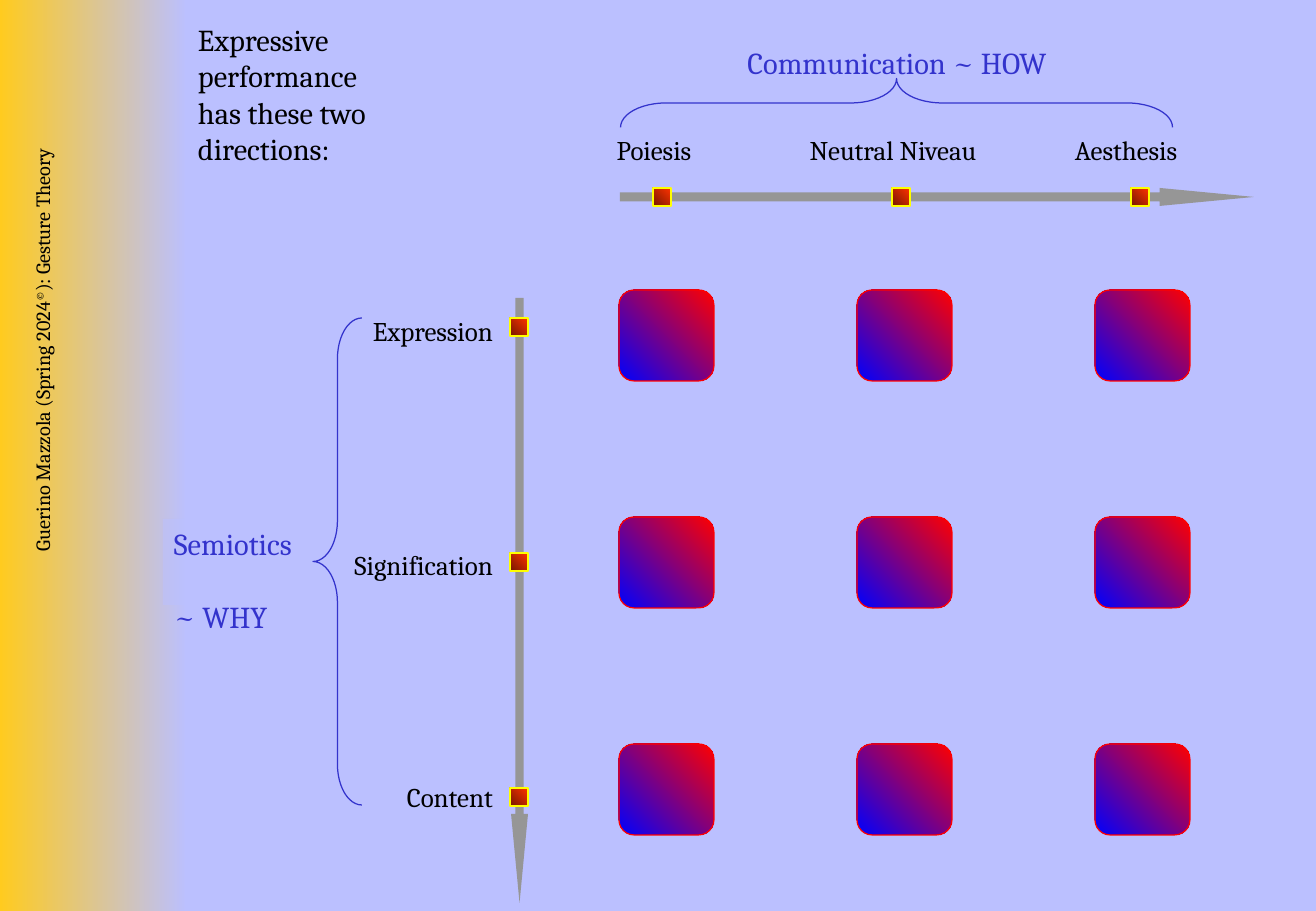
"""Build a slide that crosses the axes of communication and semiotics."""
import pptx
import pptx.dml.color
import pptx.enum.shapes
import pptx.enum.text
import pptx.oxml
import pptx.oxml.ns
import pptx.util

STATEMENT = [["Expressive performance"], ["has these two directions:"]]
CREDIT = [["Guerino Mazzola (Spring 2024", "©", "): Gesture Theory"]]
HOW = [["Communication ~ HOW"]]
WHY = [["Semiotics"], ["~ WHY"]]
STAGES = [("Poiesis", 654), ("Neutral Niveau", 893), ("Aesthesis", 1126)]
LEVELS = [("Expression", 331), ("Signification", 565), ("Content", 797)]

COLORS = {
    "background": "BBC0FF", "gold": "FFCB1F", "ink": "000000",
    "heading": "3333CC", "axis": "969696", "marker_dark": "761800",
    "marker_light": "FF3300", "marker_edge": "FFFF00",
    "cell_dark": "0000FF", "cell_light": "FF0000",
}
FONT = "Cambria"
PX = 914400 / 121.5
SHAPES = pptx.enum.shapes.MSO_SHAPE
ALIGN = pptx.enum.text.PP_ALIGN
ANCHOR = pptx.enum.text.MSO_ANCHOR


def px(length):
    return pptx.util.Emu(round(length * PX))


def rgb(name):
    return pptx.dml.color.RGBColor.from_string(COLORS[name])


def write(frame, paragraphs, size=16, color="ink", align=ALIGN.LEFT,
          anchor=ANCHOR.MIDDLE, wrap=True, gap=0, superscript="©"):
    frame.auto_size = pptx.enum.text.MSO_AUTO_SIZE.NONE
    frame.word_wrap = wrap
    frame.vertical_anchor = anchor
    frame.margin_left = frame.margin_right = 0
    frame.margin_top = frame.margin_bottom = 0
    for index, pieces in enumerate(paragraphs):
        paragraph = frame.add_paragraph() if index else frame.paragraphs[0]
        paragraph.alignment = align
        if index:
            paragraph.space_before = pptx.util.Pt(gap)
        for piece in pieces:
            run = paragraph.add_run()
            run.text = piece
            run.font.name = FONT
            run.font.size = pptx.util.Pt(size)
            run.font.color.rgb = rgb(color)
            if piece == superscript:
                run.font._element.set("baseline", "30000")


def add_text(slide, box, paragraphs, rotation=0, **style):
    holder = slide.shapes.add_textbox(*map(px, box))
    holder.rotation = rotation
    write(holder.text_frame, paragraphs, **style)


def add_part(slide, kind, box, fill=None, line=None, angle=45, alpha=None,
             adjust=(), rotation=0):
    part = slide.shapes.add_shape(kind, *map(px, box))
    part.shadow.inherit = False
    part.rotation = rotation
    for index, value in enumerate(adjust):
        part.adjustments[index] = value
    if fill is None:
        part.fill.background()
    elif isinstance(fill, tuple):
        part.fill.gradient()
        part.fill.gradient_angle = angle
        for stop, name, position in zip(part.fill.gradient_stops, fill, (0, 1)):
            stop.color.rgb = rgb(name)
            stop.position = position
    else:
        part.fill.solid()
        part.fill.fore_color.rgb = rgb(fill)
    if alpha is not None:
        tint = part.fill._xPr.find(".//" + pptx.oxml.ns.qn("a:srgbClr"))
        opacity = pptx.oxml.parse_xml(
            f'<a:alpha {pptx.oxml.ns.nsdecls("a")} val="{alpha * 1000}"/>')
        tint.append(opacity)
    if line is None:
        part.line.fill.background()
    else:
        part.line.color.rgb = rgb(line)
        part.line.width = pptx.util.Pt(0.75)
    return part


def add_marker(slide, x, y):
    add_part(slide, SHAPES.FLOWCHART_PROCESS, (x - 9, y - 9, 18, 18),
             fill=("marker_dark", "marker_light"), line="marker_edge")


def add_heading(slide, box, paragraphs, **style):
    add_part(slide, SHAPES.RECTANGLE, box, fill="background", alpha=50)
    left, top, width, height = box
    add_text(slide, (left + 11, top + 6, width - 22, height - 12), paragraphs,
             size=18, color="heading", wrap=False, **style)


def main():
    deck = pptx.Presentation()
    deck.slide_width, deck.slide_height = px(1316), px(911)
    slide = deck.slides.add_slide(deck.slide_layouts[5])
    slide.background.fill.solid()
    slide.background.fill.fore_color.rgb = rgb("background")

    title = slide.shapes.title
    title.left, title.top, title.width, title.height = map(px, (198, 21, 187, 146))
    write(title.text_frame, STATEMENT, size=18, anchor=ANCHOR.TOP)

    add_part(slide, SHAPES.RECTANGLE, (0, 0, 187, 911),
             fill=("gold", "background"), angle=0)
    add_text(slide, (-288, 464, 660, 30), CREDIT, rotation=270, size=12,
             align=ALIGN.RIGHT)

    add_part(slide, SHAPES.RIGHT_ARROW, (217, 592, 605, 17), fill="axis",
             adjust=(0.49, 5.25), rotation=90)
    add_part(slide, SHAPES.RIGHT_ARROW, (620, 188, 634, 18), fill="axis",
             adjust=(0.49, 5.24))
    for index, (level, middle) in enumerate(LEVELS):
        add_marker(slide, 519, 327 + 235 * index)
        add_text(slide, (333, middle - 22, 160, 44), [[level]], align=ALIGN.RIGHT)
    for index, (stage, center) in enumerate(STAGES):
        add_marker(slide, 662 + 239 * index, 197)
        add_text(slide, (center - 100, 128, 200, 44), [[stage]], align=ALIGN.CENTER)

    add_heading(slide, (163, 519, 146, 86), WHY, anchor=ANCHOR.TOP, gap=21.5)
    add_part(slide, SHAPES.LEFT_BRACE, (313, 318, 49, 487), line="heading",
             adjust=(0.83, 0.5))
    add_heading(slide, (735, 38, 324, 49), HOW, align=ALIGN.CENTER)
    add_part(slide, SHAPES.LEFT_BRACE, (872, -173, 49, 552), line="heading",
             adjust=(0.93, 0.5), rotation=90)

    for column in range(len(STAGES)):
        for row in range(len(LEVELS)):
            add_part(slide, SHAPES.ROUNDED_RECTANGLE,
                     (619 + 238 * column, 290 + 227 * row, 95, 91),
                     fill=("cell_dark", "cell_light"), line="cell_light")

    deck.save("out.pptx")


if __name__ == "__main__":
    main()
